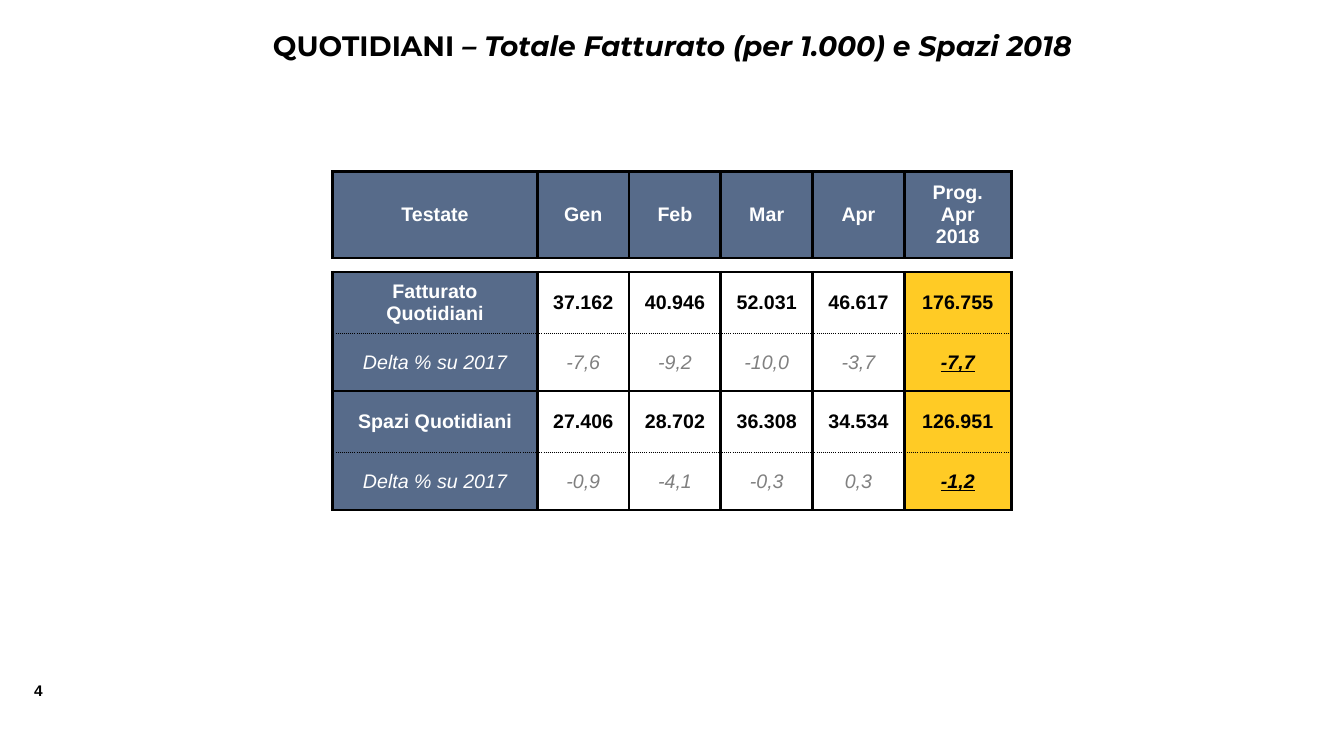
"""Build the slide on newspaper revenue and advertising space in 2018."""
from lxml import etree
from pptx import Presentation
from pptx.dml.color import RGBColor
from pptx.enum.text import MSO_ANCHOR, PP_ALIGN
from pptx.oxml.ns import qn
from pptx.util import Inches, Pt

CENTER, LEFT = PP_ALIGN.CENTER, PP_ALIGN.LEFT
MIDDLE = MSO_ANCHOR.MIDDLE
BLUE, YELLOW, GREY = "576B8A", "FFCB25", "808080"
BLACK, WHITE = "000000", "FFFFFF"
THICK, THIN, DOTTED, NONE = (2.25, "solid"), (1, "solid"), (1, "sysDot"), None

COL_WIDTHS = [2.03, 0.91, 0.91, 0.91, 0.91, 1.06]
ROW_HEIGHTS = [0.86, 0.14, 0.61, 0.57, 0.61, 0.57]
ROW_LINES = [THICK, THICK, THICK, DOTTED, THIN, DOTTED, THICK]
SPACER_ROW = 1
ROWS = [
    ["Testate", "Gen", "Feb", "Mar", "Apr", "Prog.\nApr\n2018"],
    [""] * len(COL_WIDTHS),
    ["Fatturato Quotidiani", "37.162", "40.946", "52.031", "46.617", "176.755"],
    ["Delta % su 2017", "-7,6", "-9,2", "-10,0", "-3,7", "-7,7"],
    ["Spazi Quotidiani", "27.406", "28.702", "36.308", "34.534", "126.951"],
    ["Delta % su 2017", "-0,9", "-4,1", "-0,3", "0,3", "-1,2"],
]


def rgb(value):
    """Return the colour for a hex string."""
    return RGBColor.from_string(value)


def add_run(p, text, size=14, font="Arial", color=BLACK, bold=True, italic=False,
            underline=False, align=CENTER):
    """Add a formatted run to a paragraph."""
    p.alignment = align
    r = p.add_run()
    r.text = text
    r.font.size = Pt(size)
    r.font.name = font
    r.font.color.rgb = rgb(color)
    r.font.bold, r.font.italic, r.font.underline = bold, italic, underline


def add_textbox(s, left, top, width, height, wrap=True):
    """Add a text box and return its first paragraph."""
    sp = s.shapes.add_textbox(Inches(left), Inches(top), Inches(width), Inches(height))
    sp.text_frame.word_wrap = wrap
    return sp.text_frame.paragraphs[0]


def set_border(cell, side, line):
    """Draw one side of a cell, or hide it when there is no line."""
    tc_pr = cell._tc.get_or_add_tcPr()
    ln = etree.SubElement(tc_pr, qn(f"a:ln{side}"))
    if line is NONE:
        etree.SubElement(ln, qn("a:noFill"))
        return
    width, dash = line
    ln.set("w", str(Pt(width)))
    fill = etree.SubElement(ln, qn("a:solidFill"))
    etree.SubElement(fill, qn("a:srgbClr"), val=BLACK)
    etree.SubElement(ln, qn("a:prstDash"), val=dash)


def set_cell(cell, text, fill, margins, sides, top, bottom, **fmt):
    """Set the borders, fill and text of a table cell."""
    for side, line in zip("LRTB", (sides, sides, top, bottom)):
        set_border(cell, side, line)
    if fill:
        cell.fill.solid()
        cell.fill.fore_color.rgb = rgb(fill)
    else:
        cell.fill.background()
    cell.vertical_anchor = MIDDLE
    cell.margin_left = cell.margin_right = Inches(margins[0])
    cell.margin_top = cell.margin_bottom = Inches(margins[1])
    tf = cell.text_frame
    if not text:
        etree.SubElement(tf.paragraphs[0]._p, qn("a:endParaRPr"), sz="100")
    for i, line in enumerate(text.split("\n") if text else []):
        p = tf.add_paragraph() if i else tf.paragraphs[0]
        add_run(p, line, **fmt)


def cell_look(row, col):
    """Return the fill, margins and text format for a place in the table."""
    if row == SPACER_ROW:
        return None, (0, 0), {}
    is_delta = ROWS[row][0].startswith("Delta")
    if row == 0 or col == 0:
        return BLUE, (0.1, 0.05), dict(color=WHITE, bold=not is_delta, italic=is_delta)
    if col == len(COL_WIDTHS) - 1:
        return YELLOW, (0, 0), dict(italic=is_delta, underline=is_delta)
    color = GREY if is_delta else BLACK
    return None, (0, 0), dict(color=color, bold=not is_delta, italic=is_delta)


def add_results_table(s, left, top):
    """Add the table of monthly results."""
    width, height = Inches(sum(COL_WIDTHS)), Inches(sum(ROW_HEIGHTS))
    table = s.shapes.add_table(len(ROWS), len(COL_WIDTHS), Inches(left), Inches(top),
                               width, height).table
    table.first_row = table.horz_banding = False
    for column, w in zip(table.columns, COL_WIDTHS):
        column.width = Inches(w)
    for i, (row, h) in enumerate(zip(table.rows, ROW_HEIGHTS)):
        row.height = Inches(h)
        sides = NONE if i == SPACER_ROW else THICK
        for j, text in enumerate(ROWS[i]):
            fill, margins, fmt = cell_look(i, j)
            set_cell(table.cell(i, j), text, fill, margins, sides,
                     ROW_LINES[i], ROW_LINES[i + 1], **fmt)


def main():
    """Build and save the slide."""
    prs = Presentation()
    prs.slide_width, prs.slide_height = Inches(13.33), Inches(7.5)
    s = prs.slides.add_slide(prs.slide_layouts[6])
    page = add_textbox(s, 0.24, 6.71, 0.42, 0.29, wrap=False)
    add_run(page, "4", size=11, align=LEFT)
    title = add_textbox(s, 1.67, 0.23, 10, 0.44)
    add_run(title, "QUOTIDIANI ", size=20, font="Montserrat")
    add_run(title, "– Totale Fatturato (per 1.000) e Spazi 2018", size=20,
            font="Montserrat", italic=True)
    add_results_table(s, 3.3, 1.7)
    prs.save("out.pptx")


if __name__ == "__main__":
    main()
